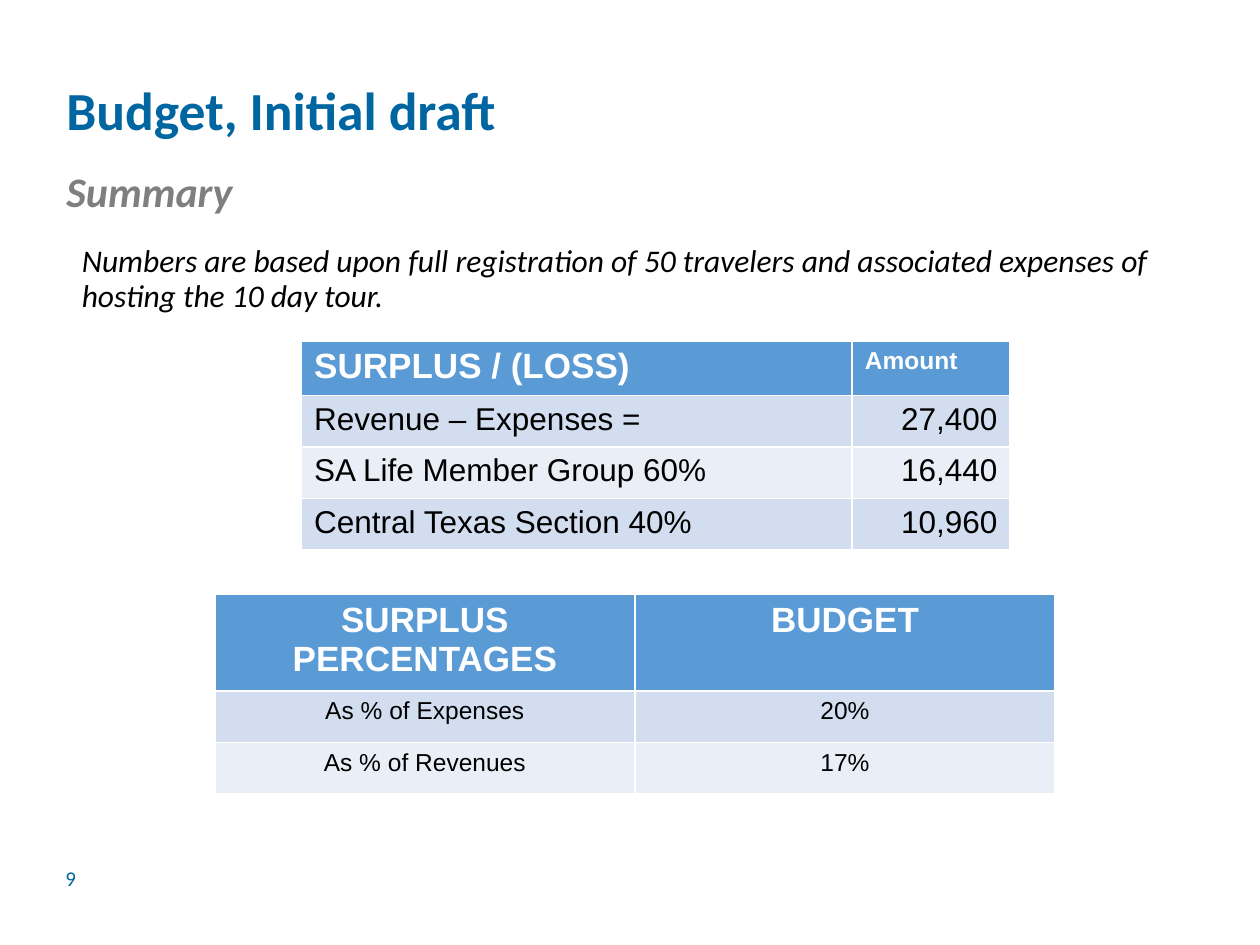
from pptx import Presentation
from pptx.dml.color import RGBColor
from pptx.enum.text import MSO_ANCHOR, PP_ALIGN
from pptx.util import Cm, Pt

COLORS = {
    "brand": "0066A1",
    "subtitle": "7F7F7F",
    "ink": "000000",
    "white": "FFFFFF",
    "header": "5B9BD5",
    "band_dark": "D2DEEF",
    "band_light": "EAEFF7",
}


class BudgetSlide:
    text_font = "Calibri"
    table_font = "Arial"
    row_height = 1.04

    def __init__(self, presentation):
        self.slide = presentation.slides.add_slide(presentation.slide_layouts[6])

    def style(self, paragraph, face, size, color, bold=False, italic=False):
        font = paragraph.font
        font.name = face
        font.size = Pt(size)
        font.bold = bold
        font.italic = italic
        font.color.rgb = RGBColor.from_string(COLORS[color])

    def text(self, wording, place, size, color, bold=False, italic=False,
             spacing=0.9, anchor=MSO_ANCHOR.TOP):
        frame = self.slide.shapes.add_textbox(*map(Cm, place)).text_frame
        frame.word_wrap = True
        frame.vertical_anchor = anchor
        paragraph = frame.paragraphs[0]
        paragraph.text = wording
        paragraph.line_spacing = spacing
        self.style(paragraph, self.text_font, size, color, bold, italic)

    def table(self, rows, left, top, widths, header_sizes, body_size, alignments):
        height = self.row_height * len(rows)
        table = self.slide.shapes.add_table(
            len(rows), len(widths), Cm(left), Cm(top), Cm(sum(widths)), Cm(height)
        ).table
        for column, width in zip(table.columns, widths):
            column.width = Cm(width)
        for row_index, row in enumerate(rows):
            table.rows[row_index].height = Cm(self.row_height)
            is_header = row_index == 0
            band = "band_dark" if row_index % 2 else "band_light"
            for column_index, wording in enumerate(row):
                cell = table.cell(row_index, column_index)
                cell.fill.solid()
                cell.fill.fore_color.rgb = RGBColor.from_string(
                    COLORS["header" if is_header else band]
                )
                paragraph = cell.text_frame.paragraphs[0]
                paragraph.text = wording
                paragraph.alignment = alignments[is_header][column_index]
                self.style(
                    paragraph,
                    self.table_font,
                    header_sizes[column_index] if is_header else body_size,
                    "white" if is_header else "ink",
                    bold=is_header,
                )


def main():
    presentation = Presentation()
    presentation.slide_width = Cm(25.4)
    presentation.slide_height = Cm(19.05)
    budget = BudgetSlide(presentation)

    budget.text("9", (1.07, 17.2, 5.72, 1.02), 12, "brand",
                spacing=1.0, anchor=MSO_ANCHOR.MIDDLE)
    budget.text("Budget, Initial draft", (1.09, 1.57, 23.39, 1.45), 30.6,
                "brand", bold=True)
    budget.text("Summary", (1.09, 3.33, 23.39, 1.17), 24, "subtitle",
                bold=True, italic=True)
    budget.text(
        "Numbers are based upon full registration of 50 travelers "
        "and associated expenses of hosting the 10 day tour.",
        (1.4, 4.83, 22.61, 1.12), 18, "ink", italic=True,
    )

    left, center, right = PP_ALIGN.LEFT, PP_ALIGN.CENTER, PP_ALIGN.RIGHT
    surplus = [
        ("SURPLUS / (LOSS)", "Amount"),
        ("Revenue – Expenses =", "27,400"),
        ("SA Life Member Group 60%", "16,440"),
        ("Central Texas Section 40%", "10,960"),
    ]
    budget.table(surplus, 6.08, 6.87, (11.1, 3.18), (20, 14), 18,
                 {True: (left, left), False: (left, right)})

    percentages = [
        ("SURPLUS PERCENTAGES", "BUDGET"),
        ("As % of Expenses", "20%"),
        ("As % of Revenues", "17%"),
    ]
    budget.table(percentages, 4.33, 11.98, (8.47, 8.47), (20, 20), 14,
                 {True: (center, center), False: (center, center)})

    presentation.save("out.pptx")


if __name__ == "__main__":
    main()
